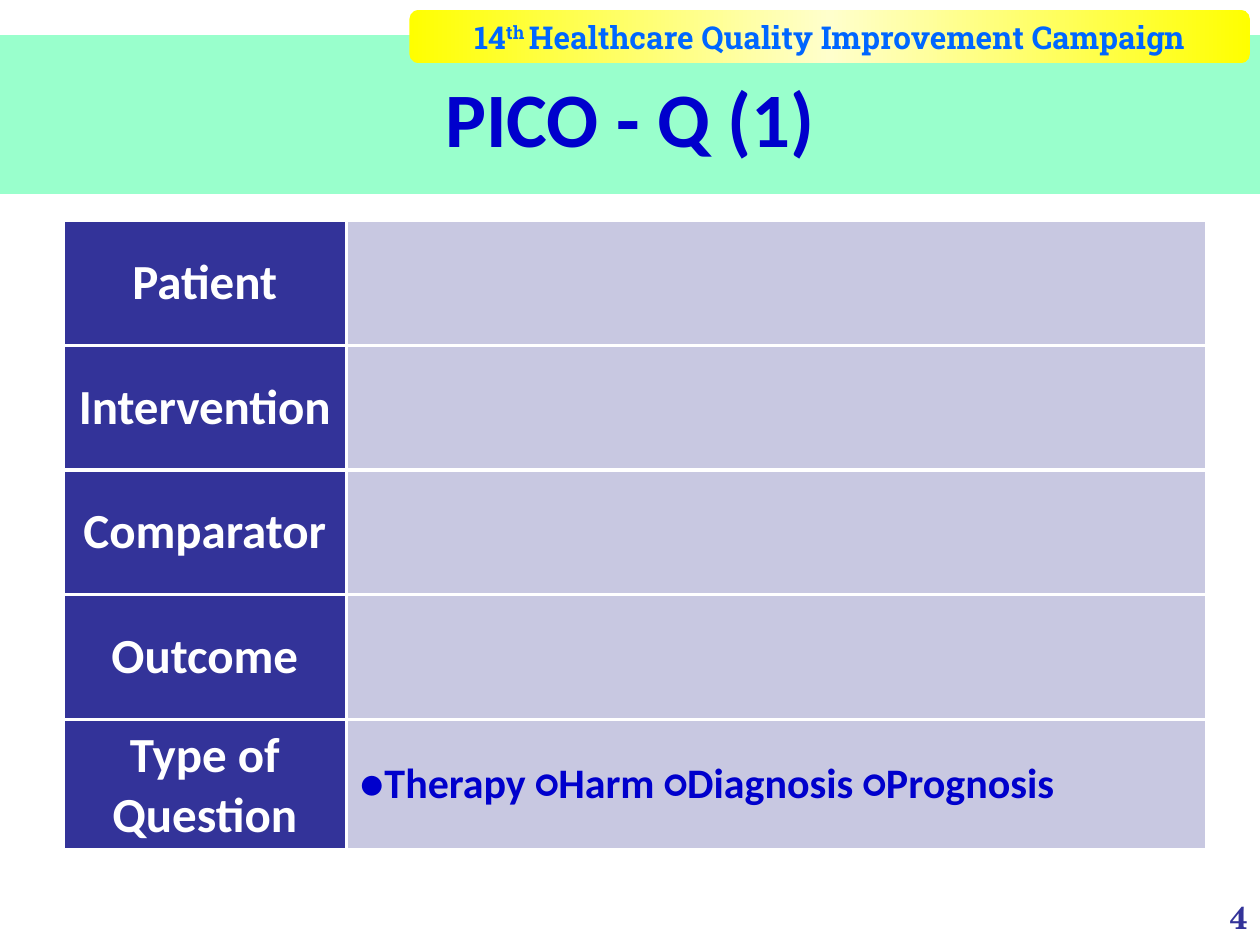
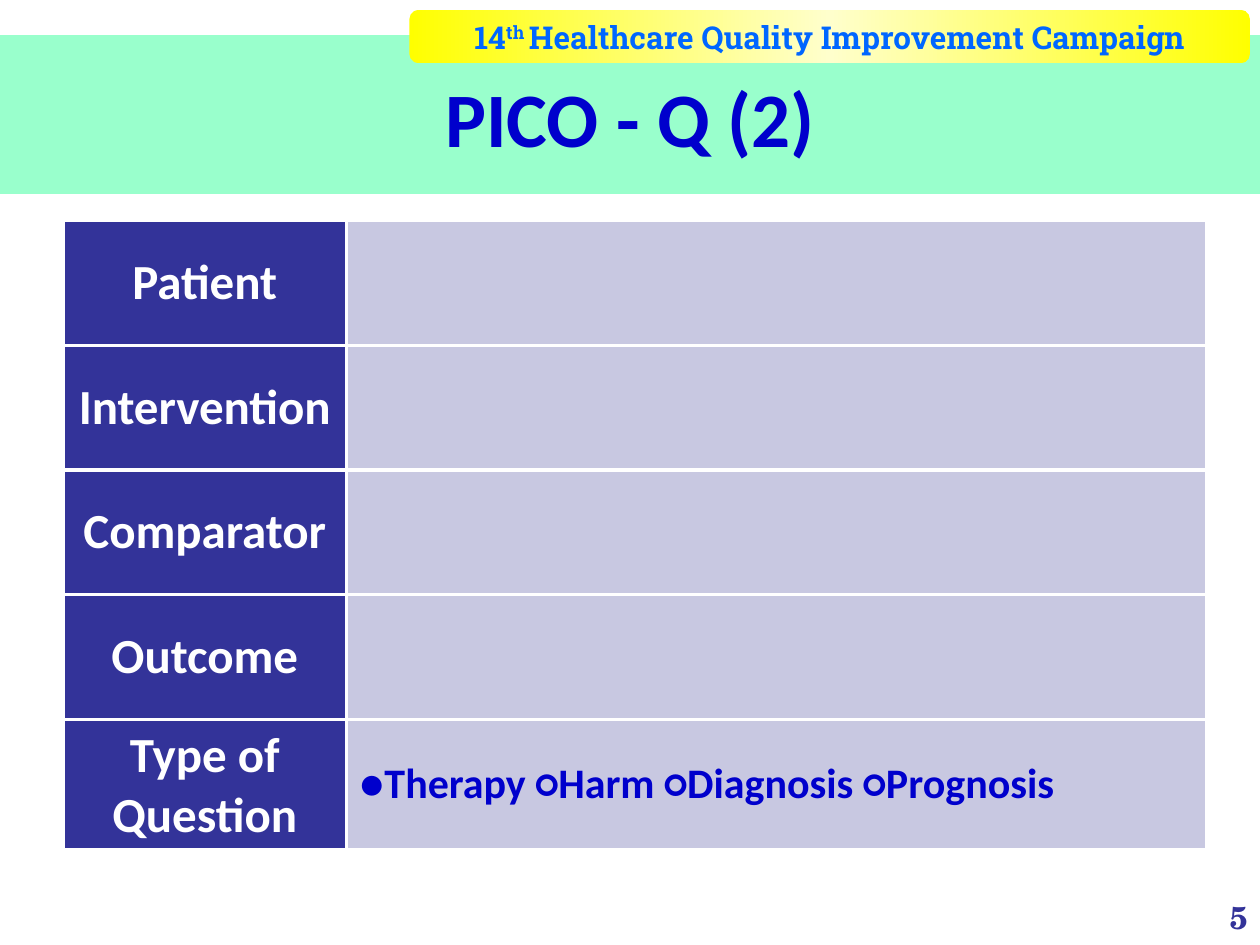
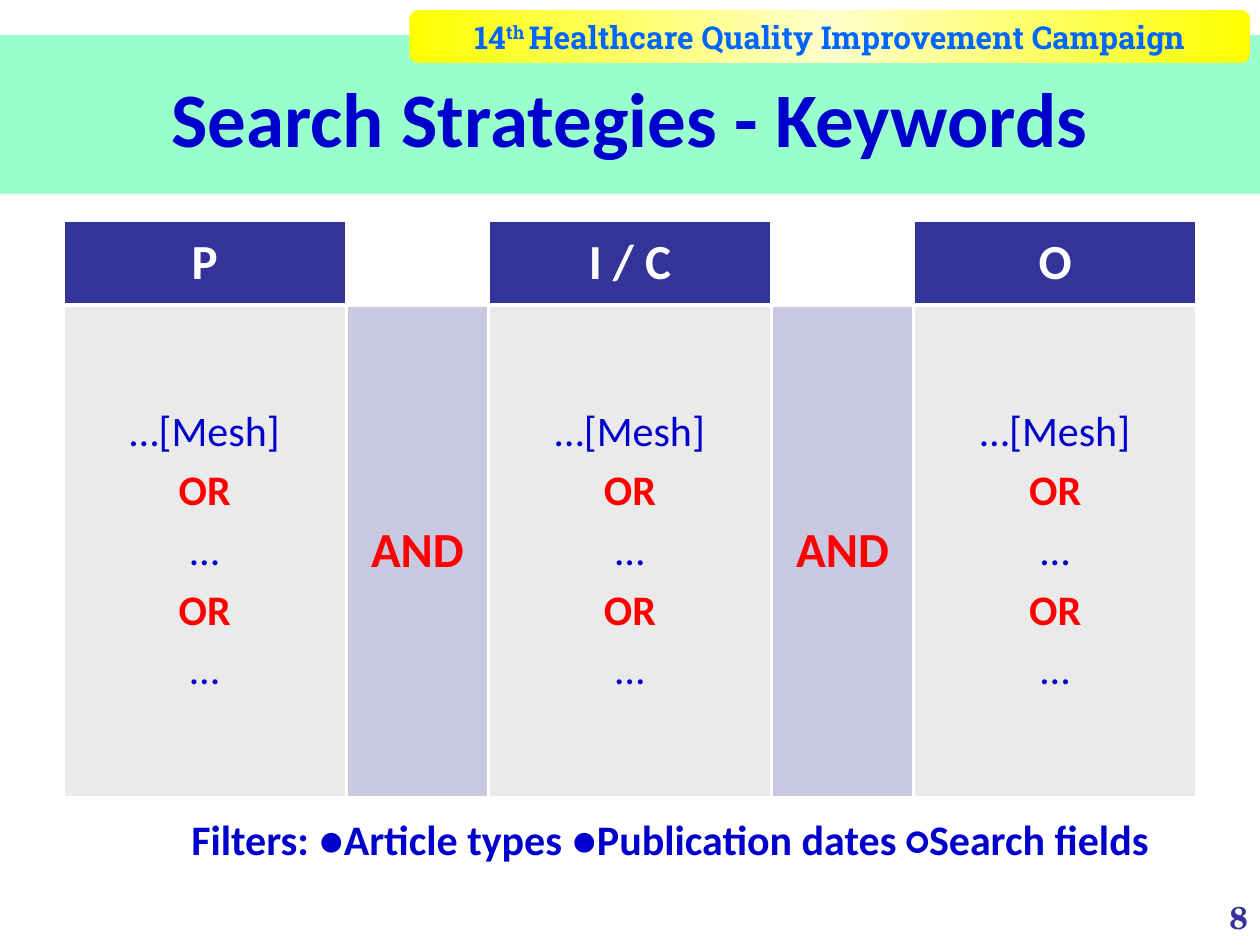
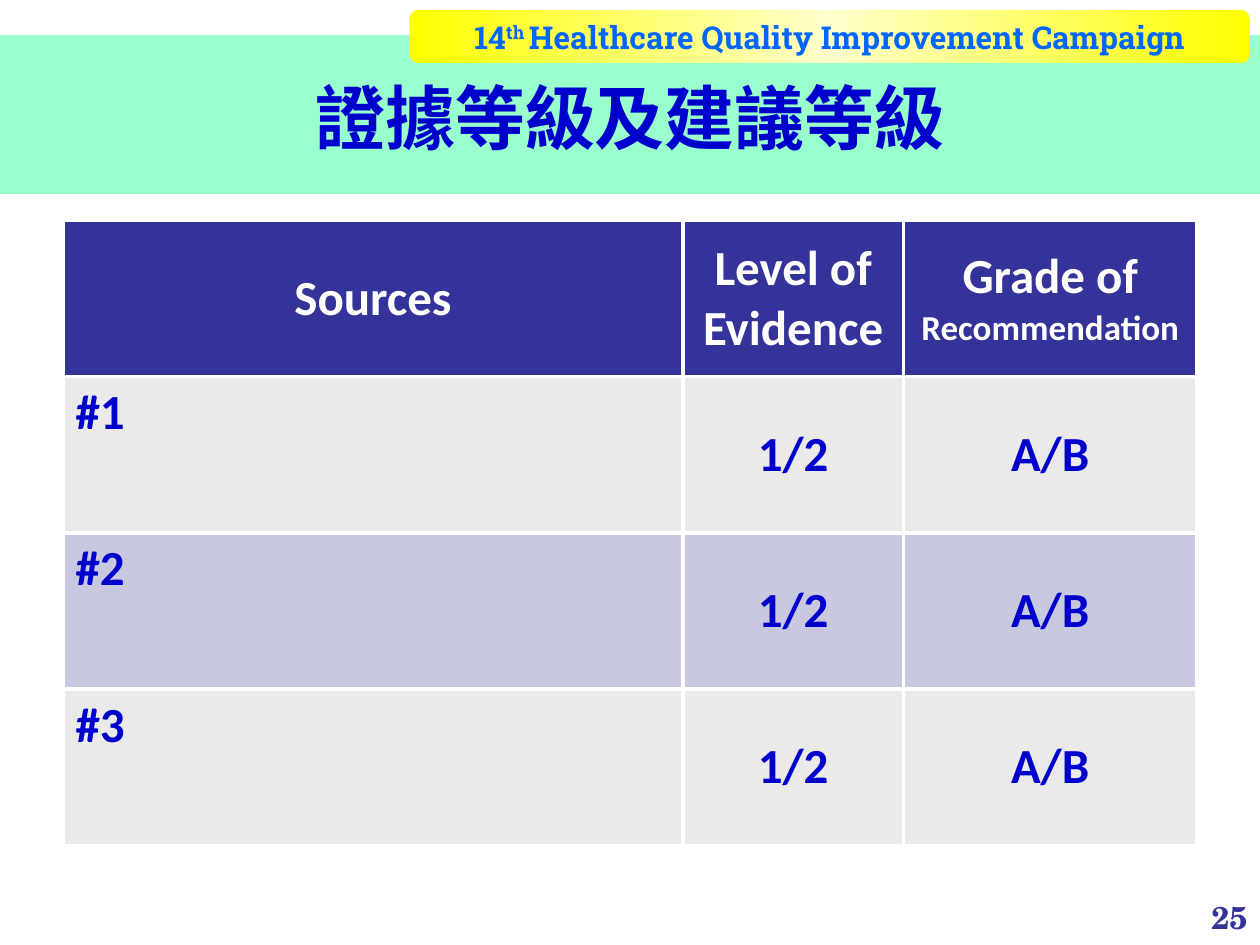
"""Build four evidence-based practice slides: PICO forms, keywords and grades."""
from pptx import Presentation
from pptx.dml.color import RGBColor as Rgb
from pptx.enum.shapes import MSO_SHAPE as Shape
from pptx.enum.text import MSO_ANCHOR as Anchor, MSO_AUTO_SIZE as Auto, PP_ALIGN as Align
from pptx.oxml import parse_xml
from pptx.oxml.ns import nsdecls, qn
from pptx.util import Inches, Pt

HUES = {
    "navy": "333399", "ink": "0000CC", "red": "FF0000", "white": "FFFFFF",
    "lilac": "C8C8E1", "gray": "EAEAEA", "mint": "99FFCC", "sky": "0066FF",
    "yellow": "FFFF00", "cream": "FFFFCC",
}
SANS, SLAB, SERIF = "Calibri", "Roboto Slab", "TeX Gyre Schola"
BANNER = [("14", 0), ("th ", 30000), ("Healthcare Quality Improvement Campaign", 0)]
GLOW = [(0, "yellow"), (50000, "cream"), (100000, "yellow")]

LOOKS = {
    "head": ("white", 28, True, Align.CENTER, Anchor.MIDDLE),
    "pick": ("ink", 24, True, Align.LEFT, Anchor.MIDDLE),
    "keys": ("ink", 24, False, Align.CENTER, Anchor.MIDDLE),
    "join": ("red", 28, True, Align.CENTER, Anchor.MIDDLE),
    "ref": ("ink", 28, True, Align.LEFT, Anchor.TOP),
    "grade": ("ink", 28, True, Align.CENTER, Anchor.MIDDLE),
}
SPECIAL = {"OR": ("red", 24, True), "Recommendation": ("white", 20, True)}


def head(*runs):
    return "navy", "head", [runs]


BLANK = (None, "head", [])
FIELD = ("lilac", "pick", [])
TYPES = ("lilac", "pick", [["●Therapy ○Harm ○Diagnosis ○Prognosis"]])
TERMS = ("gray", "keys", [["…[Mesh]"], ["OR"], ["…"], ["OR"], ["…"]])
AND = ("lilac", "join", [["AND"]])

PICO = {
    "cols": [2.25, 6.83], "rows": [0.99] * 5,
    "cells": [[head(name), FIELD] for name in
              ("Patient", "Intervention", "Comparator", "Outcome")]
             + [[head("Type of Question"), TYPES]],
}
SEARCH = {
    "cols": [2.25, 2.25 / 2] * 2 + [2.25], "rows": [0.67, 3.91],
    "cells": [[head("P"), BLANK, head("I / C"), BLANK, head("O")],
              [TERMS, AND, TERMS, AND, TERMS]],
}
GRADES = {
    "cols": [4.92, 1.75, 2.33], "rows": [1.24] * 4,
    "cells": [[head("Sources"), head("Level of Evidence"),
               head("Grade of ", "Recommendation")]]
             + [[(fill, "ref", [[f"#{n}"]]), (fill, "grade", [["1/2"]]),
                 (fill, "grade", [["A/B"]])]
                for n, fill in enumerate(("gray", "lilac", "gray"), 1)],
}
SLIDES = [
    ("PICO - Q (1)", 44, "4", PICO, None),
    ("PICO - Q (2)", 44, "5", PICO, None),
    ("Search Strategies - Keywords", 44, "8", SEARCH,
     "Filters: ●Article types ●Publication dates ○Search fields"),
    ("證據等級及建議等級", 40, "25", GRADES, None),
]


def paint(font, face, size, hue, bold=True):
    font.name, font.size, font.bold = face, Pt(size), bold
    font.color.rgb = Rgb.from_string(HUES[hue])


def place(shape, *box):
    shape.left, shape.top, shape.width, shape.height = map(Inches, box)


def add_form(slide, kind, *box):
    form = slide.shapes.add_shape(kind, *map(Inches, box))
    form.shadow.inherit = False
    form.line.fill.background()
    return form


def add_label(slide, text, box, face, size, hue, align):
    frame = slide.shapes.add_textbox(*map(Inches, box)).text_frame
    frame.word_wrap = True
    frame.text = text
    para = frame.paragraphs[0]
    para.alignment = align
    paint(para.runs[0].font, face, size, hue)


def add_glow(form):
    form.fill.background()
    stops = "".join(f'<a:gs pos="{pos}"><a:srgbClr val="{HUES[hue]}"/></a:gs>'
                    for pos, hue in GLOW)
    glow = parse_xml(f'<a:gradFill {nsdecls("a")} rotWithShape="1"><a:gsLst>{stops}'
                     '</a:gsLst><a:lin ang="0" scaled="1"/></a:gradFill>')
    props = form.element.spPr
    props.replace(props.find(qn("a:noFill")), glow)


def add_frame(slide, layout):
    band = add_form(slide, Shape.RECTANGLE, 0, 0.28, 10, 1.26)
    band.fill.solid()
    band.fill.fore_color.rgb = Rgb.from_string(HUES["mint"])
    banner = add_form(slide, Shape.ROUNDED_RECTANGLE, 3.25, 0.08, 6.67, 0.42)
    add_glow(banner)
    frame = banner.text_frame
    frame.word_wrap = False
    frame.vertical_anchor = Anchor.MIDDLE
    para = frame.paragraphs[0]
    para.alignment = Align.CENTER
    for text, rise in BANNER:
        run = para.add_run()
        run.text = text
        paint(run.font, SLAB, 18, "sky")
        if rise:
            run.font._element.set("baseline", str(rise))
    for num, form in enumerate((band, banner)):
        form.element.nvSpPr.cNvPr.set("id", str(20 + num))
        layout.shapes.element.insert(2 + num, form.element)


def fill_cell(cell, fill, look, paras):
    hue, size, bold, align, anchor = LOOKS[look]
    props = cell._tc.get_or_add_tcPr()
    for side in "LRTB":
        props.append(parse_xml(
            f'<a:ln{side} {nsdecls("a")} w="{Pt(2.25)}"><a:solidFill>'
            f'<a:srgbClr val="{HUES["white"]}"/></a:solidFill></a:ln{side}>'))
    if fill:
        cell.fill.solid()
        cell.fill.fore_color.rgb = Rgb.from_string(HUES[fill])
    else:
        cell.fill.background()
    cell.vertical_anchor = anchor
    frame = cell.text_frame
    for num, runs in enumerate(paras):
        para = frame.add_paragraph() if num else frame.paragraphs[0]
        para.alignment = align
        if num:
            para.space_before = Pt(size * 0.2)
        for text in runs:
            run = para.add_run()
            run.text = text
            paint(run.font, SANS, *reversed_look(text, hue, size, bold))


def reversed_look(text, hue, size, bold):
    hue, size, bold = SPECIAL.get(text, (hue, size, bold))
    return size, hue, bold


def add_grid(slide, grid):
    cols, rows = grid["cols"], grid["rows"]
    box = map(Inches, (0.5, 1.75, sum(cols), sum(rows)))
    table = slide.shapes.add_table(len(rows), len(cols), *box).table
    table.first_row = table.horz_banding = False
    for col, width in zip(table.columns, cols):
        col.width = Inches(width)
    for row, height, cells in zip(table.rows, rows, grid["cells"]):
        row.height = Inches(height)
        for cell, part in zip(row.cells, cells):
            fill_cell(cell, *part)


def add_title(slide, text, size):
    title = slide.shapes.title
    place(title, 0.5, 0.3, 9, 1.25)
    frame = title.text_frame
    frame.text = text
    frame.auto_size = Auto.NONE
    frame.vertical_anchor = Anchor.MIDDLE
    para = frame.paragraphs[0]
    para.alignment = Align.CENTER
    paint(para.runs[0].font, SANS, size, "ink")


def main():
    deck = Presentation()
    deck.slide_width, deck.slide_height = Inches(10), Inches(7.5)
    layout = deck.slide_layouts[5]
    for num, (title, size, page, grid, note) in enumerate(SLIDES):
        slide = deck.slides.add_slide(layout)
        if num == 0:
            add_frame(slide, layout)
        add_label(slide, page, (7.67, 7.08, 2.33, 0.52), SERIF, 18, "navy", Align.RIGHT)
        add_title(slide, title, size)
        add_grid(slide, grid)
        if note:
            add_label(slide, note, (1.42, 6.41, 8.33, 0.5), SANS, 24, "ink", Align.LEFT)
    deck.save("out.pptx")


if __name__ == "__main__":
    main()
